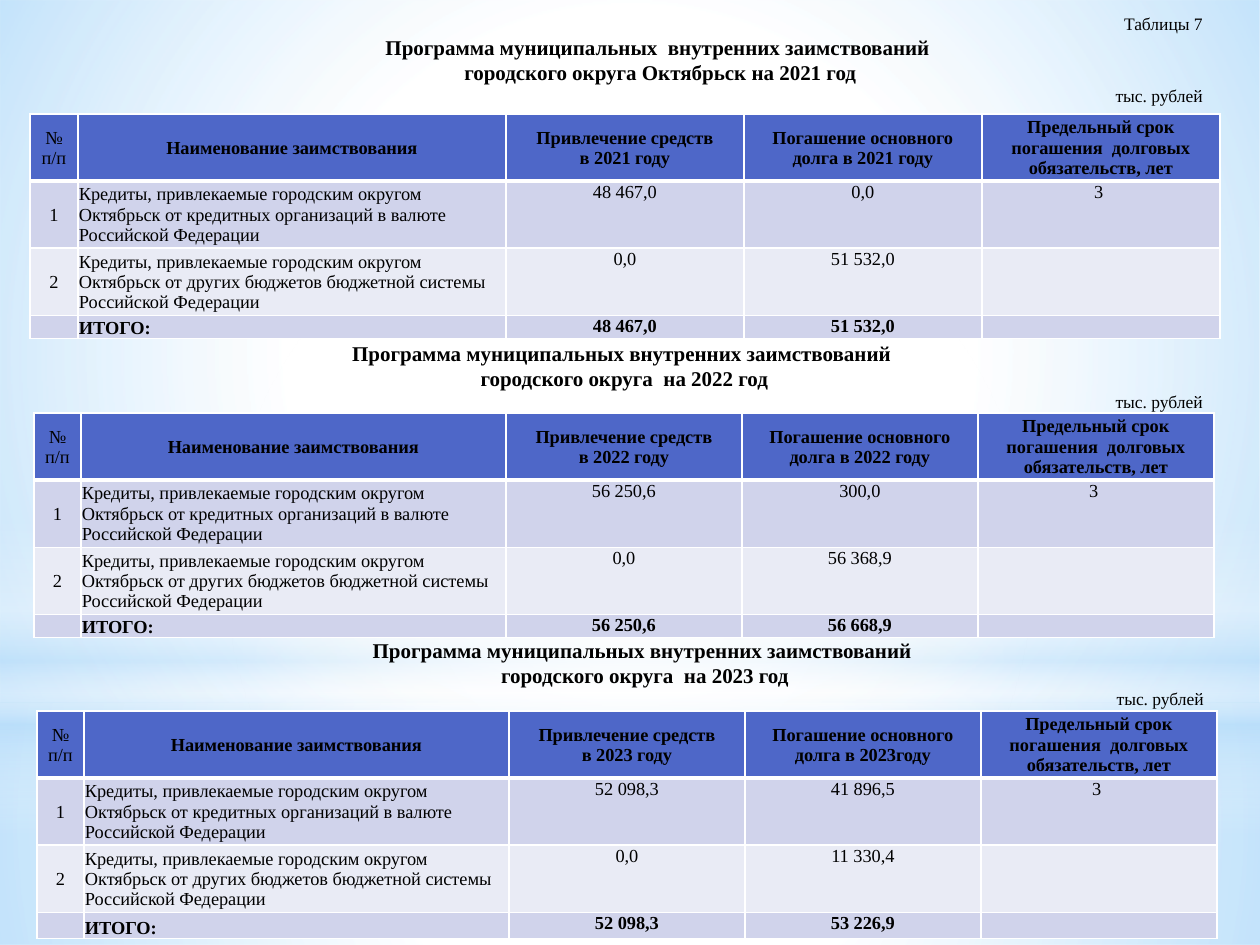
from lxml.etree import SubElement
from pptx import Presentation
from pptx.dml.color import RGBColor
from pptx.enum.shapes import MSO_SHAPE as Shape
from pptx.enum.text import MSO_ANCHOR as Anchor, PP_ALIGN as Align
from pptx.oxml.ns import qn
from pptx.util import Emu, Pt

FONT = "Times New Roman"
BLACK, WHITE, SKY = "000000", "FFFFFF", "B4DCFA"
HEADER, BAND, PALE = "4E67C8", "D0D3EB", "E9EBF5"
BODY_SIZE = 10.5
UNIT = "тыс. рублей"
TITLE = "Программа муниципальных внутренних заимствований "
LOAN = "Кредиты, привлекаемые городским округом Октябрьск от "
BANKS = LOAN + "кредитных организаций в валюте Российской Федерации"
BUDGETS = LOAN + "других бюджетов бюджетной системы Российской Федерации"


def px(length):
    """Turn px at 126 to the inch into EMU."""
    return Emu(round(length * 914400 / 126))


def paint(color, hex_value):
    """Set a colour format from a hex string."""
    color.rgb = RGBColor.from_string(hex_value)


def child(parent, tag, **attributes):
    """Append a DrawingML element and return it."""
    return SubElement(parent, qn(f"a:{tag}"), {key: str(value) for key, value in attributes.items()})


def write(paragraph, text, size, bold=False, align=Align.LEFT):
    """Write text into a paragraph, one run for each line."""
    paragraph.alignment = align
    for number, line in enumerate(text.split("\n")):
        if number:
            paragraph.add_line_break()
        run = paragraph.add_run()
        run.text = line
        run.font.name, run.font.size, run.font.bold = FONT, Pt(size), bold
        paint(run.font.color, BLACK)


def glow(slide, kind, box, stops, angle=None):
    """Place a gradient shape, radial unless an angle is given."""
    shape = slide.shapes.add_shape(kind, *map(px, box))
    shape.shadow.inherit = False
    shape.line.fill.background()
    shape.fill.gradient()
    gradient = shape._element.spPr.find(qn("a:gradFill"))
    for part in list(gradient):
        gradient.remove(part)
    stop_list = child(gradient, "gsLst")
    for position, color, alpha in stops:
        stop = child(stop_list, "gs", pos=position * 1000)
        child(child(stop, "srgbClr", val=color), "alpha", val=alpha * 1000)
    if angle is None:
        centre = child(gradient, "path", path="circle")
        child(centre, "fillToRect", l=50000, t=50000, r=50000, b=50000)
    else:
        child(gradient, "lin", ang=angle * 60000, scaled=0)


def backdrop(slide, box):
    """Place the soft blue sky with its horizon."""
    left, top, width, height = box
    horizon = 703
    glow(slide, Shape.RECTANGLE, (left, top + horizon, width, height - horizon),
         [(0, WHITE, 91), (37, WHITE, 76), (100, SKY, 79)])
    glow(slide, Shape.RECTANGLE, (left, top, width, horizon),
         [(0, WHITE, 89), (48, WHITE, 62), (100, SKY, 79)])
    glow(slide, Shape.RECTANGLE, (left, top + 519, width, 315),
         [(0, WHITE, 0), (29, WHITE, 30), (45, SKY, 40),
          (55, WHITE, 26), (65, SKY, 60), (100, WHITE, 0)], 90)
    glow(slide, Shape.OVAL, (left, top + 220, width, horizon),
         [(0, WHITE, 100), (56, WHITE, 0)])


def heading(slide, box, lines, indent=0):
    """Place a heading from lines of text, size, weight and alignment."""
    frame = slide.shapes.add_textbox(*map(px, box)).text_frame
    frame.word_wrap = True
    frame.vertical_anchor = Anchor.BOTTOM
    for number, line in enumerate(lines):
        paragraph = frame.add_paragraph() if number else frame.paragraphs[0]
        write(paragraph, *line)
        if indent:
            paragraph._p.get_or_add_pPr().set("indent", str(px(indent)))


def fill_cell(cell, text, row, column):
    """Give a loan table cell its borders, fill and text."""
    header, total = row == 0, row == 3
    properties = cell._tc.get_or_add_tcPr()
    thick = {"lnB": header, "lnT": row == 1}
    for side in ("lnL", "lnR", "lnT", "lnB"):
        line = child(properties, side, w=Pt(3 if thick.get(side) else 1))
        child(child(line, "solidFill"), "srgbClr", val=WHITE)
    cell.fill.solid()
    paint(cell.fill.fore_color, HEADER if header else PALE if row == 2 else BAND)
    cell.margin_left = cell.margin_right = cell.margin_top = px(1)
    cell.margin_bottom = 0
    named = column == 1 and not header
    if named and total:
        cell.vertical_anchor = Anchor.BOTTOM
    else:
        cell.vertical_anchor = Anchor.MIDDLE if header or column < 2 else Anchor.TOP
    paragraph = cell.text_frame.paragraphs[0]
    if text:
        bold = total or (header and column > 0)
        write(paragraph, text, BODY_SIZE, bold, Align.LEFT if named else Align.CENTER)
    else:
        child(paragraph._p, "endParaRPr", sz=round(BODY_SIZE * 100))


def loan_table(slide, box, number_width, name_width, columns, banks, budgets, totals):
    """Place one year's borrowing table in the given box."""
    left, top, width, height = box
    amount_width = (width - number_width - name_width) // 3
    rows = [
        ["№ п/п", "Наименование заимствования", *columns,
         "Предельный срок погашения  долговых обязательств, лет"],
        ["1", BANKS, *banks, "3 "],
        ["2", BUDGETS, *budgets, ""],
        ["", "ИТОГО:", *totals, ""],
    ]
    table = slide.shapes.add_table(4, 5, *map(px, box)).table
    table.horz_banding = False
    for column, length in zip(table.columns, [number_width, name_width] + [amount_width] * 3):
        column.width = px(length)
    for row, length in zip(table.rows, [67, 67, 67, height - 201]):
        row.height = px(length)
    for row, texts in enumerate(rows):
        for column, text in enumerate(texts):
            fill_cell(table.cell(row, column), text, row, column)


def year_columns(year, ending):
    """Name the two amount columns of a year."""
    return f"Привлечение средств\nв {year} году", f"Погашение основного\nдолга в {year}{ending}"


def main():
    """Build the slide and save it."""
    deck = Presentation()
    deck.slide_width, deck.slide_height = px(1260), px(945)
    slide = deck.slides.add_slide(deck.slide_layouts[6])
    backdrop(slide, (0, 0, 1260, 945))

    unit = (UNIT, 10, False, Align.RIGHT)
    heading(slide, (44, 6, 1171, 106), [
        ("Таблицы 7", 10, False, Align.RIGHT),
        ("Программа муниципальных  внутренних заимствований ", 12, True, Align.CENTER),
        ("городского округа Октябрьск на 2021 год", 12, True, Align.CENTER),
        unit,
    ], indent=62)
    for year, box in ((2022, (34, 314, 1181, 104)), (2023, (74, 631, 1142, 84))):
        title = f"{TITLE}\nгородского округа  на {year} год"
        heading(slide, box, [(title, 12, True, Align.CENTER), unit])

    loan_table(slide, (30, 114, 1190, 224), 48, 428, year_columns(2021, " году"),
               ("48 467,0", "0,0"), ("0,0", "51 532,0"), ("48 467,0", "51 532,0"))
    loan_table(slide, (34, 413, 1180, 224), 47, 425, year_columns(2022, " году"),
               ("56 250,6", "300,0"), ("0,0", "56 368,9"), ("56 250,6", "56 668,9"))
    loan_table(slide, (37, 711, 1180, 227), 47, 425, year_columns(2023, "году"),
               ("52 098,3", "41 896,5"), ("0,0", "11 330,4"), ("52 098,3", "53 226,9"))
    deck.save("out.pptx")


if __name__ == "__main__":
    main()
